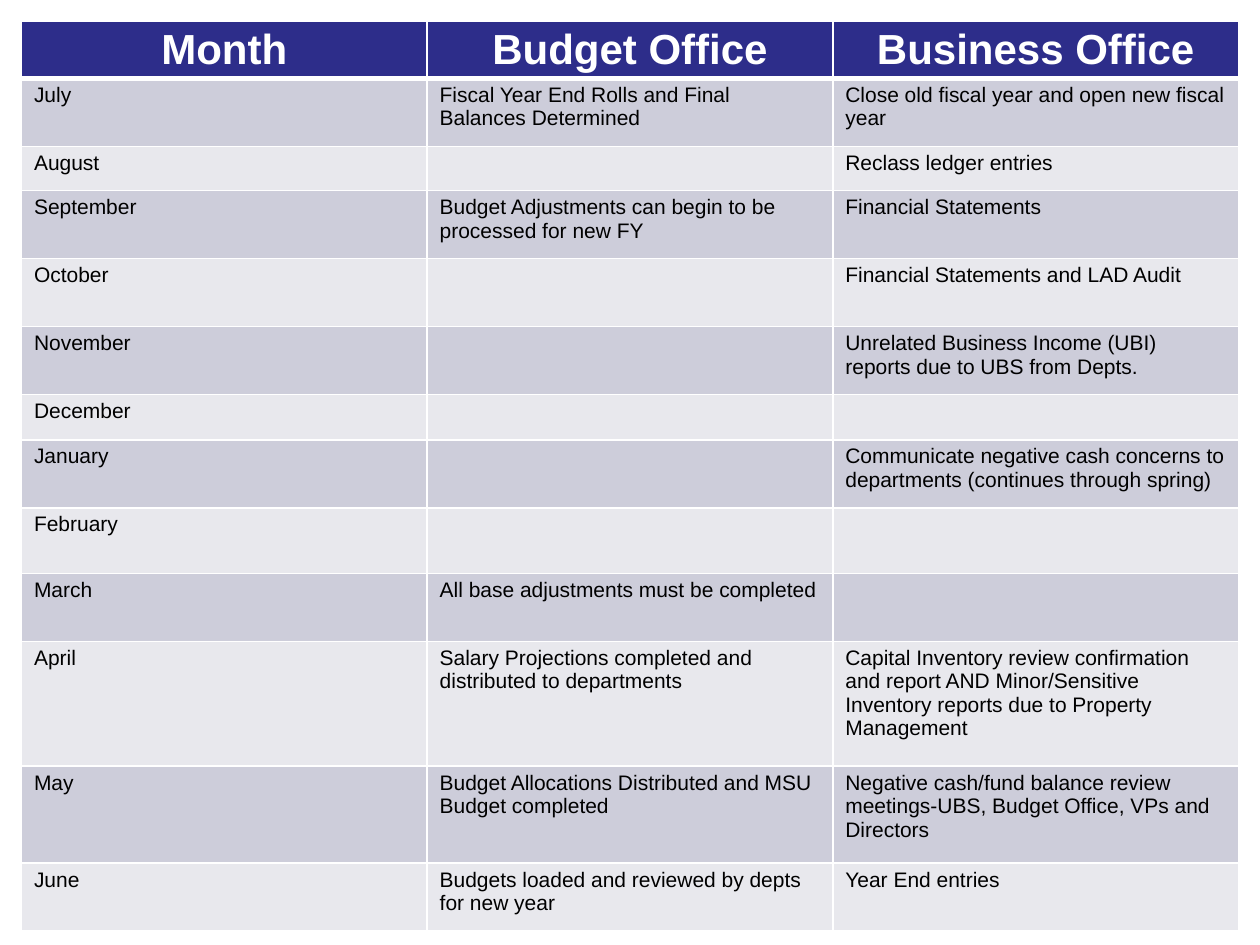
from lxml import etree
from pptx import Presentation
from pptx import util as u
from pptx.dml.color import RGBColor
from pptx.enum import text
from pptx.oxml.ns import qn

NAVY = RGBColor(0x2D, 0x2D, 0x8A)
BAND_DARK = RGBColor(0xCD, 0xCD, 0xDA)
BAND_LIGHT = RGBColor(0xE8, 0xE8, 0xED)
WHITE = RGBColor(0xFF, 0xFF, 0xFF)
BLACK = RGBColor(0, 0, 0)

HEADER = ("Month", "Budget Office", "Business Office")

# Month, budget office task, business office task, row height
CALENDAR = [
    ("July", "Fiscal Year End Rolls and Final Balances Determined",
     "Close old fiscal year and open new fiscal year", 0.54),
    ("August", "", "Reclass ledger entries", 0.35),
    ("September", "Budget Adjustments can begin to be processed for new FY",
     "Financial Statements", 0.54),
    ("October", "", "Financial Statements and LAD Audit", 0.54),
    ("November", "",
     "Unrelated Business Income (UBI) reports due to UBS from Depts.", 0.54),
    ("December", "", "", 0.36),
    ("January", "",
     "Communicate negative cash concerns to departments "
     "(continues through spring)", 0.54),
    ("February", "", "", 0.52),
    ("March", "All base adjustments must be completed", "", 0.54),
    ("April", "Salary Projections completed and distributed to departments",
     "Capital Inventory review confirmation and report AND Minor/Sensitive "
     "Inventory reports due to Property Management", 0.99),
    ("May", "Budget Allocations Distributed and MSU Budget completed",
     "Negative cash/fund balance review meetings-UBS, Budget Office, "
     "VPs and Directors", 0.77),
    ("June", "Budgets loaded and reviewed by depts for new year",
     "Year End entries", 0.54),
]


def write(tf, words, size=12, color=BLACK, bold=False, align=None):
    p = tf.paragraphs[0]
    p.alignment = align
    if not words:
        # An empty cell keeps the body size, so its row stays low
        end = etree.SubElement(p._p, qn("a:endParaRPr"))
        end.set("sz", str(size * 100))
        return
    r = p.add_run()
    r.text = words
    r.font.name = "Arial"
    r.font.size = u.Pt(size)
    r.font.bold = bold
    r.font.color.rgb = color


class Deck:
    def __init__(self, width, height):
        self.prs = Presentation()
        self.prs.slide_width = u.Inches(width)
        self.prs.slide_height = u.Inches(height)
        self.s = None

    def add_slide(self):
        self.s = self.prs.slides.add_slide(self.prs.slide_layouts[6])

    def border(self, cell, side, width):
        ln = etree.SubElement(cell._tc.get_or_add_tcPr(), qn(f"a:ln{side}"),
                              w=str(u.Pt(width)))
        fill = etree.SubElement(ln, qn("a:solidFill"))
        etree.SubElement(fill, qn("a:srgbClr"), val=str(WHITE))

    def cell(self, cell, words, fill, top=1, bottom=1, **fmt):
        for side, width in (("L", 1), ("R", 1), ("T", top), ("B", bottom)):
            self.border(cell, side, width)
        cell.fill.solid()
        cell.fill.fore_color.rgb = fill
        cell.margin_left = cell.margin_right = u.Inches(0.1)
        cell.margin_top = cell.margin_bottom = u.Inches(0.04)
        write(cell.text_frame, words, **fmt)

    def table(self, left, top, width, header, header_height, rows):
        heights = [header_height] + [row[-1] for row in rows]
        table = self.s.shapes.add_table(
            len(heights), len(header), u.Inches(left), u.Inches(top),
            u.Inches(width), u.Inches(sum(heights))).table
        for row, height in zip(table.rows, heights):
            row.height = u.Inches(height)

        # Header row with a heavy rule below
        for c, words in enumerate(header):
            self.cell(table.cell(0, c), words, NAVY, bottom=3, size=24,
                      color=WHITE, bold=True, align=text.PP_ALIGN.CENTER)

        # Banded body rows
        for n, row in enumerate(rows, 1):
            for c, words in enumerate(row[:-1]):
                self.cell(table.cell(n, c), words,
                          BAND_DARK if n % 2 else BAND_LIGHT,
                          top=3 if n == 1 else 1)


def main():
    deck = Deck(10, 7.5)
    deck.add_slide()
    deck.table(0.17, 0.17, 9.66, HEADER, 0.38, CALENDAR)
    deck.prs.save("out.pptx")


if __name__ == "__main__":
    main()
